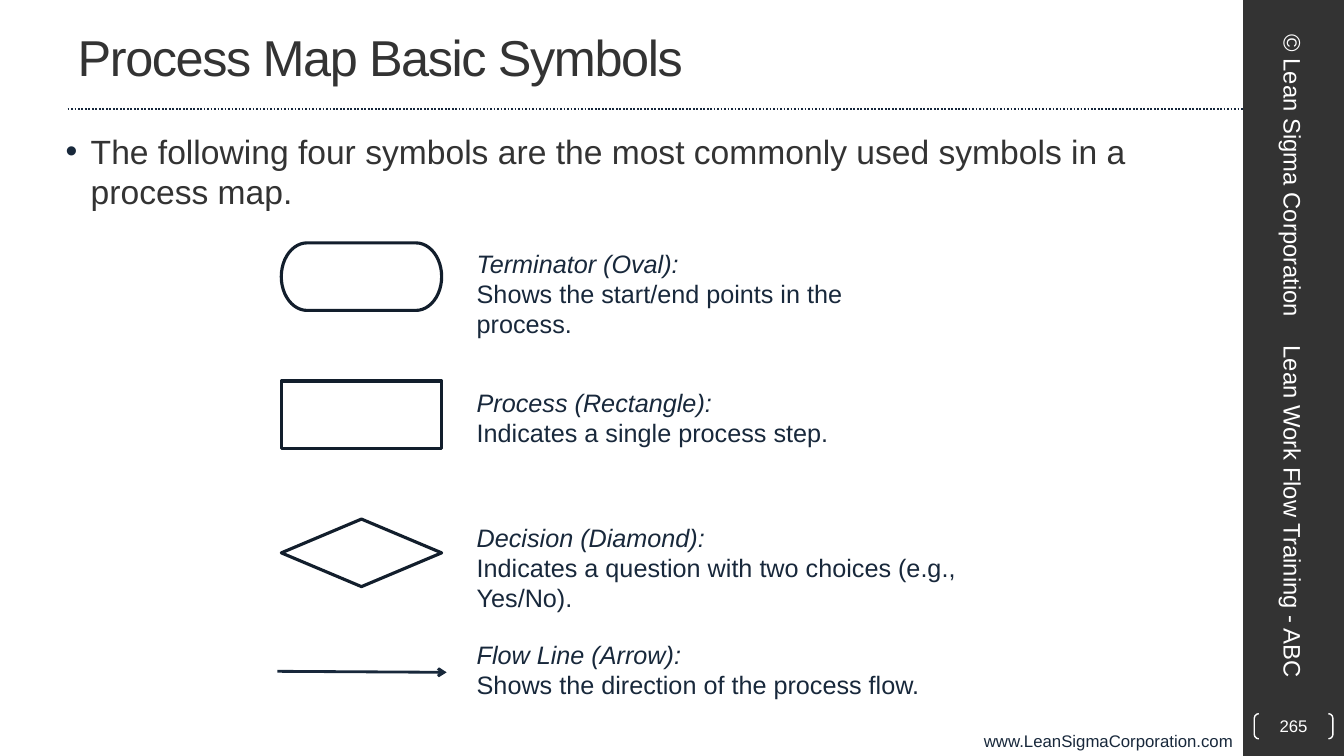
from dataclasses import dataclass
from pptx import Presentation
from pptx.dml.color import RGBColor as Color
from pptx.enum.dml import MSO_LINE as Dash
from pptx.enum.shapes import MSO_CONNECTOR as Link, MSO_SHAPE as Shape
from pptx.enum.text import MSO_ANCHOR as Anchor, MSO_AUTO_SIZE as Fit, PP_ALIGN as Align
from pptx.oxml.ns import qn
from pptx.util import Inches, Pt
from lxml.etree import SubElement as Sub


@dataclass(frozen=True)
class Theme:
    font: str = "Arial"
    dark: str = "333333"
    navy: str = "18283B"
    rule: str = "17273B"
    edge: str = "121E2C"
    white: str = "FFFFFF"
    title: int = 36
    body: int = 24
    label: int = 18
    side: int = 17
    small: int = 12


class Page:
    def __init__(self, slide, theme):
        self.slide = slide
        self.theme = theme

    def style(self, para, size, color, align=Align.LEFT):
        para.alignment = align
        para.font.name = self.theme.font
        para.font.size = Pt(size)
        para.font.color.rgb = Color.from_string(color)

    def place(self, item, box):
        item.left, item.top, item.width, item.height = map(Inches, box)

    def title(self, text, box):
        item = self.slide.shapes.title
        self.place(item, box)
        frame = item.text_frame
        frame.text = text
        frame.auto_size = Fit.NONE
        frame.vertical_anchor = Anchor.MIDDLE
        para = frame.paragraphs[0]
        self.style(para, self.theme.title, self.theme.dark)
        para.runs[0].font._element.set("spc", "-100")

    def body(self, text, box):
        item = self.slide.placeholders[1]
        self.place(item, box)
        frame = item.text_frame
        frame.text = text
        frame.auto_size = Fit.NONE
        para = frame.paragraphs[0]
        para.space_before = Pt(0)
        props = para._p.get_or_add_pPr()
        props.set("marL", str(Inches(0.38)))
        props.set("indent", str(Inches(-0.25)))
        tint = Sub(props, qn("a:buClr"))
        Sub(tint, qn("a:srgbClr"), val=self.theme.navy)
        Sub(props, qn("a:buChar"), char="•")
        self.style(para, self.theme.body, self.theme.dark)

    def text(self, lines, box, size, color, align=Align.LEFT, anchor=Anchor.TOP, turn=0):
        item = self.slide.shapes.add_textbox(*map(Inches, box))
        item.rotation = turn
        frame = item.text_frame
        frame.word_wrap = True
        frame.vertical_anchor = anchor
        frame.text = "\n".join(lines)
        for para in frame.paragraphs:
            self.style(para, size, color, align)
        return frame

    def shape(self, kind, box, fill=None, line=None, width=1):
        item = self.slide.shapes.add_shape(kind, *map(Inches, box))
        item.shadow.inherit = False
        if fill:
            item.fill.solid()
            item.fill.fore_color.rgb = Color.from_string(fill)
        else:
            item.fill.background()
        if line:
            item.line.color.rgb = Color.from_string(line)
            item.line.width = Pt(width)
        else:
            item.line.fill.background()
        return item

    def line(self, start, end, color, width, dash=None, head=False):
        item = self.slide.shapes.add_connector(Link.STRAIGHT, *map(Inches, start + end))
        item.line.color.rgb = Color.from_string(color)
        item.line.width = Pt(width)
        if dash:
            item.line.dash_style = dash
        if head:
            Sub(item.line._get_or_add_ln(), qn("a:tailEnd"), type="arrow")
        Sub(item._element.spPr, qn("a:effectLst"))

    def number(self, text, box):
        item = self.shape(Shape.DOUBLE_BRACKET, box, line=self.theme.white)
        item.adjustments[0] = 0.18
        frame = item.text_frame
        frame.margin_left = frame.margin_right = 0
        frame.margin_top = frame.margin_bottom = 0
        frame.vertical_anchor = Anchor.MIDDLE
        frame.text = text
        self.style(frame.paragraphs[0], self.theme.small, self.theme.white, Align.CENTER)

    def label(self, name, note, top, width, height):
        frame = self.text((name, note), (4.63, top, width, height),
                          self.theme.label, self.theme.navy)
        frame.paragraphs[0].font.italic = True


def main():
    deck = Presentation()
    deck.slide_width = Inches(13.33)
    deck.slide_height = Inches(7.5)
    theme = Theme()
    page = Page(deck.slides.add_slide(deck.slide_layouts[1]), theme)

    page.shape(Shape.RECTANGLE, (12.33, 0, 1, 7.5), fill=theme.dark)
    page.text(["www.LeanSigmaCorporation.com"], (0, 7.2, 12.33, 0.3),
              theme.small, theme.navy, Align.RIGHT)
    page.line((0.67, 1.08), (12.33, 1.08), theme.rule, 1.25, Dash.ROUND_DOT)
    page.title("Process Map Basic Symbols", (0.67, 0.03, 11.11, 1.05))
    page.body("The following four symbols are the most commonly used symbols in a process map.",
              (0.42, 1.25, 11.78, 6))
    page.number("265", (12.44, 7.08, 0.78, 0.25))

    sides = (
        ("© Lean Sigma Corporation", (11.24, 1.48, 3.17, 0.53), Align.CENTER),
        ("Lean Work Flow Training - ABC", (10.99, 4.9, 3.67, 0.53), Align.LEFT),
    )
    for text, box, align in sides:
        page.text([text], box, theme.side, theme.white, align, Anchor.MIDDLE, 90)

    kinds = (Shape.FLOWCHART_TERMINATOR, Shape.FLOWCHART_PROCESS, Shape.FLOWCHART_DECISION)
    for row, kind in enumerate(kinds):
        page.shape(kind, (2.79, 2.41 + 1.37 * row, 1.59, 0.67), line=theme.edge, width=2.25)
    page.line((2.75, 6.66), (4.43, 6.67), theme.navy, 2, head=True)

    labels = (
        ("Terminator (Oval):", "Shows the start/end points in the process.", 2.41, 4.74, 1.01),
        ("Process (Rectangle):", "Indicates a single process step.", 3.79, 4.74, 0.71),
        ("Decision (Diamond):", "Indicates a question with two choices (e.g., Yes/No).",
         5.13, 5.53, 1.01),
        ("Flow Line (Arrow):", "Shows the direction of the process flow.", 6.29, 4.74, 0.71),
    )
    for label in labels:
        page.label(*label)

    deck.save("out.pptx")


if __name__ == "__main__":
    main()
